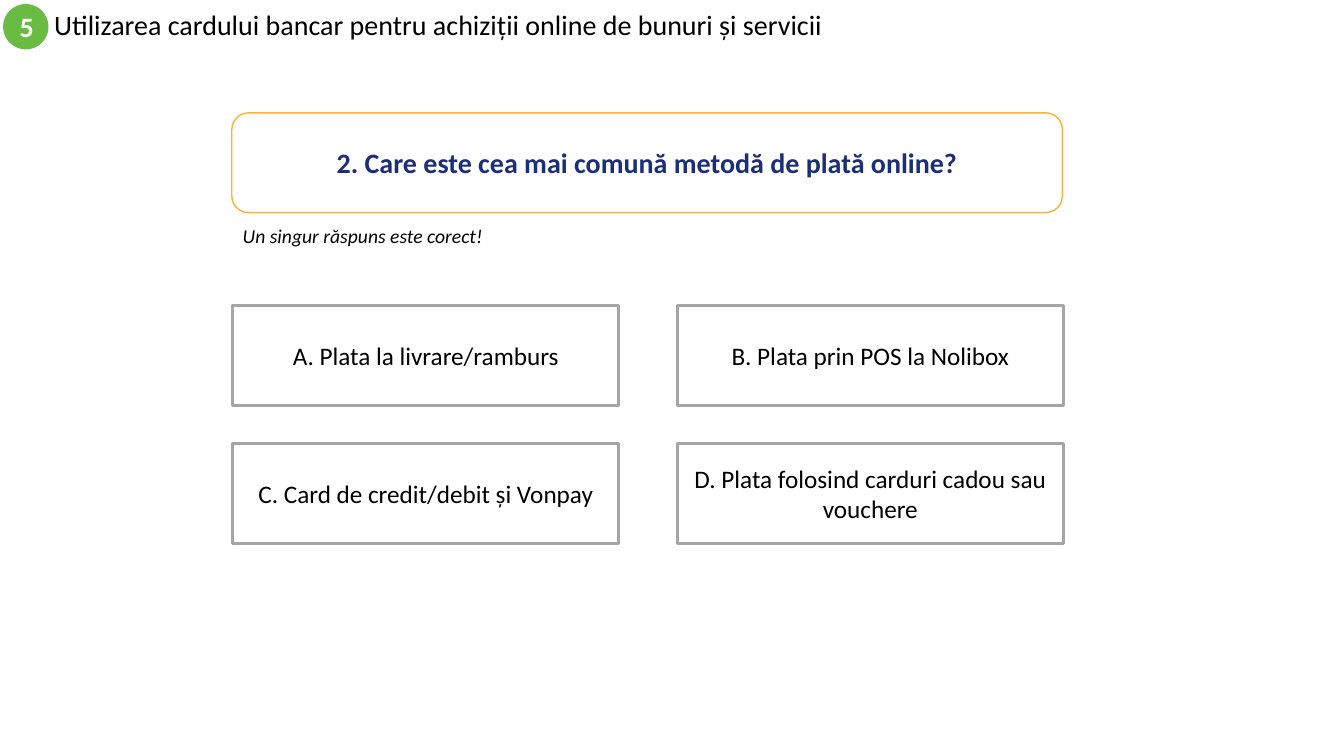
from pptx import Presentation
from pptx.dml.color import RGBColor as Rgb
from pptx.enum.shapes import MSO_SHAPE as Kind
from pptx.enum.text import MSO_ANCHOR as Anchor, PP_ALIGN as Align
from pptx.util import Pt

COLORS = {
    "black": "000000",
    "white": "FFFFFF",
    "green": "68BC42",
    "orange": "FCB13A",
    "navy": "1C2E78",
    "gray": "A5A5A5",
}


class Quiz:
    face = "Calibri"

    def __init__(self, slide):
        self.slide = slide

    def color(self, name):
        return Rgb.from_string(COLORS[name])

    def letter(self, shape, text, size, color, align, anchor, bold=False, italic=False):
        frame = shape.text_frame
        frame.word_wrap = True
        frame.vertical_anchor = anchor
        par = frame.paragraphs[0]
        par.text = text
        par.alignment = align
        font = par.font
        font.name = self.face
        font.size = Pt(size)
        font.bold = bold
        font.italic = italic
        font.color.rgb = self.color(color)
        return par

    def label(self, box, text, size, anchor=Anchor.TOP, italic=False):
        shape = self.slide.shapes.add_textbox(*map(Pt, box))
        return self.letter(shape, text, size, "black", Align.LEFT, anchor, italic=italic)

    def panel(self, kind, box, text, size, color="black", fill="white",
              line=None, width=1, bold=False):
        shape = self.slide.shapes.add_shape(kind, *map(Pt, box))
        shape.shadow.inherit = False
        shape.fill.solid()
        shape.fill.fore_color.rgb = self.color(fill)
        if line:
            shape.line.color.rgb = self.color(line)
            shape.line.width = Pt(width)
        else:
            shape.line.fill.background()
        self.letter(shape, text, size, color, Align.CENTER, Anchor.MIDDLE, bold)


def main():
    deck = Presentation()
    deck.slide_width, deck.slide_height = Pt(960), Pt(540)
    quiz = Quiz(deck.slides.add_slide(deck.slide_layouts[6]))

    title = quiz.label(
        (31.7, 2.9, 576, 32.4),
        "Utilizarea cardului bancar pentru achiziții online de bunuri și servicii",
        20, Anchor.MIDDLE)
    title.line_spacing = 0.9
    quiz.panel(Kind.OVAL, (2.2, 2.9, 32.4, 32.4), "5", 20, "white", "green", bold=True)

    quiz.panel(Kind.ROUNDED_RECTANGLE, (165.6, 80.6, 593.3, 71.3),
               "2. Care este cea mai comună metodă de plată online?",
               20, "navy", line="orange", bold=True)
    quiz.label((166.3, 156.2, 187.2, 24.5), "Un singur răspuns este corect!", 14, italic=True)

    answers = [
        "A. Plata la livrare/ramburs",
        "B. Plata prin POS la Nolibox",
        "C. Card de credit/debit și Vonpay",
        "D. Plata folosind carduri cadou sau vouchere",
    ]
    for i, answer in enumerate(answers):
        row, col = divmod(i, 2)
        box = (166.3 + 317.5 * col, 218.2 + 98.6 * row, 275.8, 71.3)
        quiz.panel(Kind.RECTANGLE, box, answer, 18, line="gray", width=2)

    deck.save("out.pptx")


if __name__ == "__main__":
    main()
